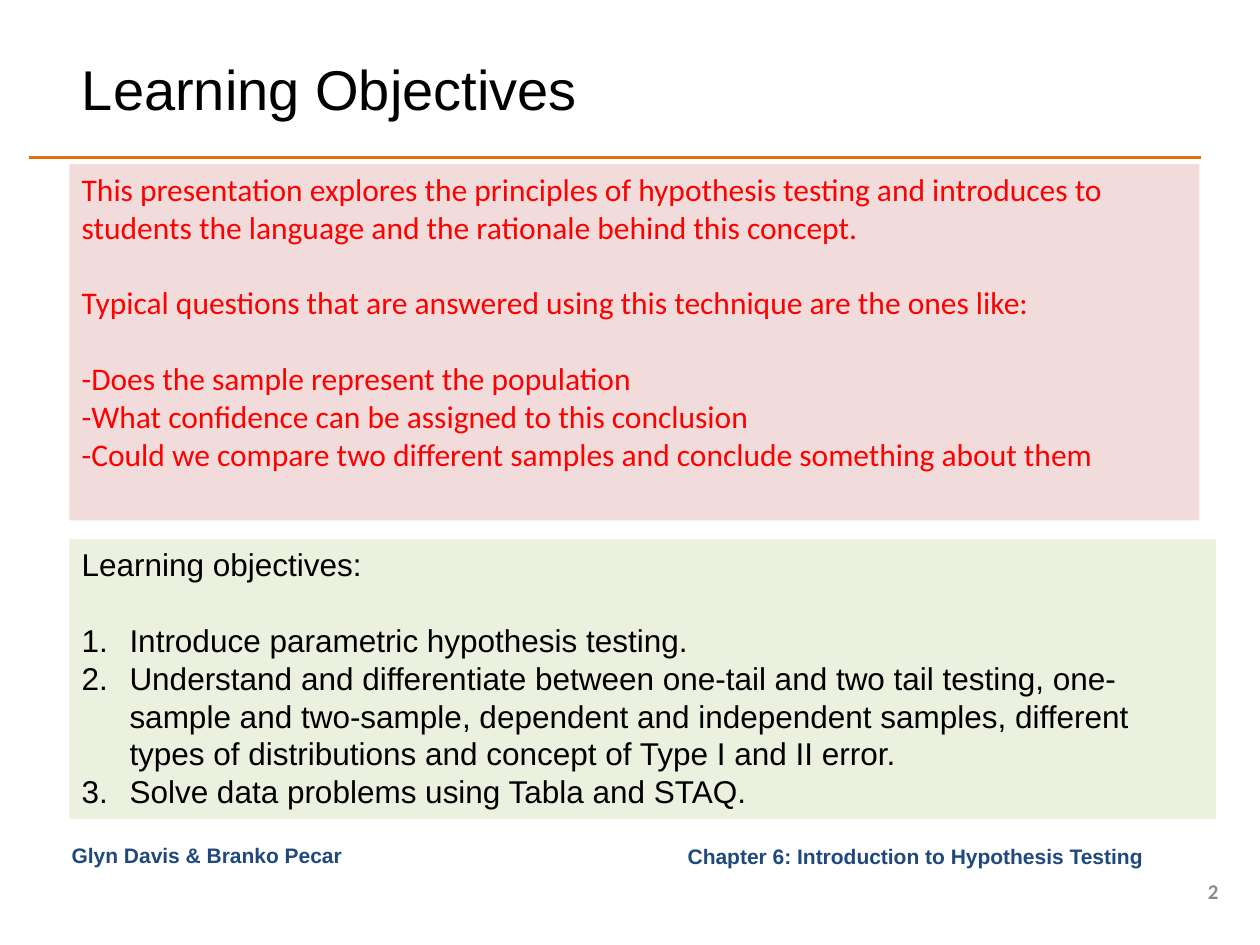
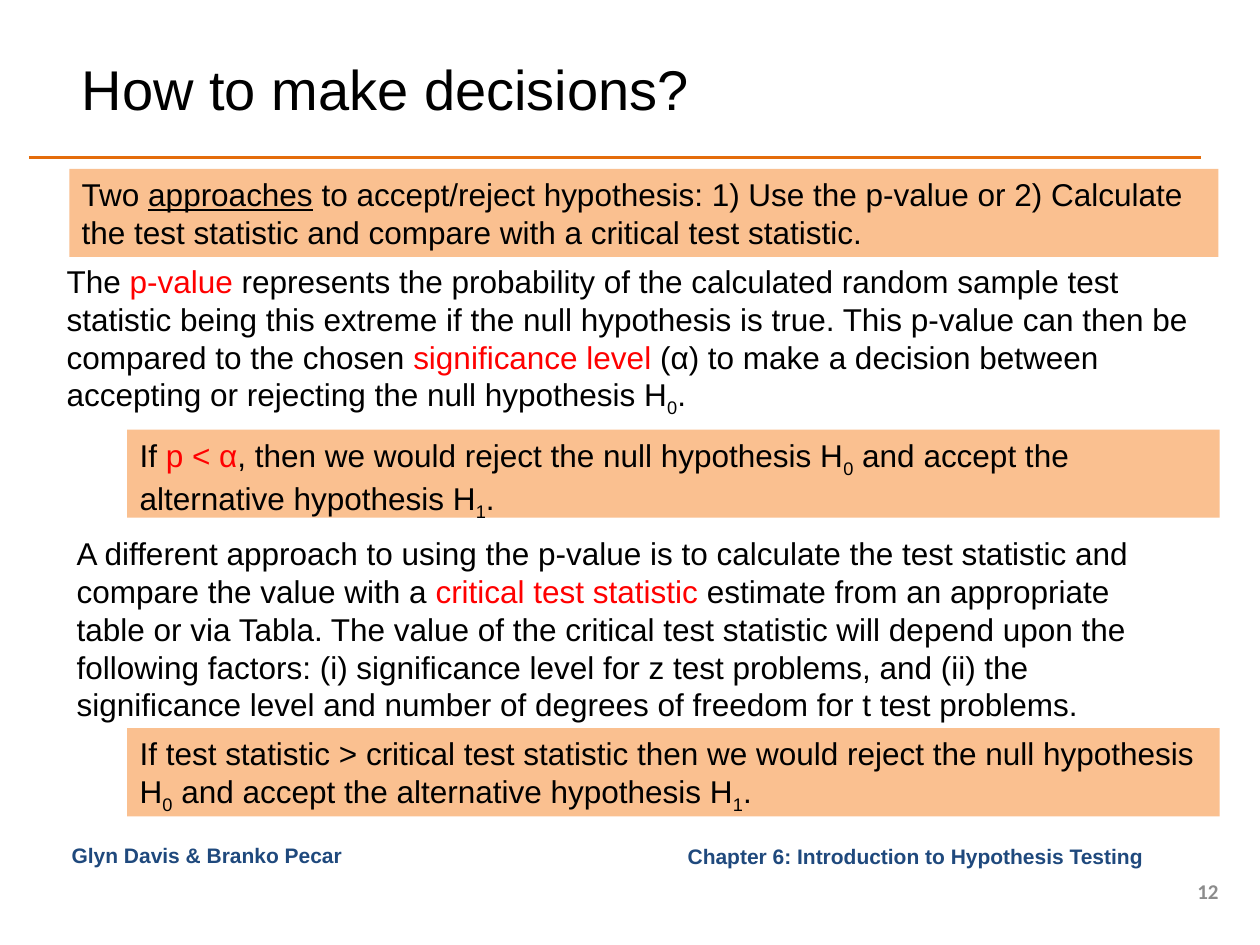
from lxml import etree
from pptx import Presentation
from pptx import util as u
from pptx.dml import color as colors
from pptx.enum import shapes, text
from pptx.oxml import ns

PX = 9144  # EMU in one px, 100 px to the inch
BLACK, RED, NAVY, GREY = "000000", "FF0000", "1F497D", "8C8C8C"
ORANGE, PINK, GREEN, PEACH = "E46C0A", "F2DCDB", "EBF1DE", "FAC090"
LEFT, RIGHT = text.PP_ALIGN.LEFT, text.PP_ALIGN.RIGHT
TOP, MIDDLE = text.MSO_ANCHOR.TOP, text.MSO_ANCHOR.MIDDLE
LINE_GAP = 21.6  # one line of 18 pt text, in points
HANG = 38        # indent of numbered items, in px


def rgb(value):
    return colors.RGBColor.from_string(value)


def write(box, place, paras, size=18, font="Arial", color=BLACK, bold=False,
          align=LEFT, anchor=TOP, fill=None, gaps=(), numbered=()):
    """Place a box and fill it; a paragraph is a string or a list of (text, style)."""
    box.left, box.top, box.width, box.height = [n * PX for n in place]
    if fill:
        box.shadow.inherit = False
        box.fill.solid()
        box.fill.fore_color.rgb = rgb(fill)
        box.line.fill.background()
    frame = box.text_frame
    frame.word_wrap = True
    frame.auto_size = text.MSO_AUTO_SIZE.NONE
    frame.vertical_anchor = anchor
    for index, spans in enumerate(paras):
        para = frame.add_paragraph() if index else frame.paragraphs[0]
        para.alignment = align
        if index in gaps:
            para.space_before = u.Pt(LINE_GAP)
        if index in numbered:
            props = para._p.get_or_add_pPr()
            props.set("marL", str(HANG * PX))
            props.set("indent", str(-HANG * PX))
            etree.SubElement(props, ns.qn("a:buFont"), typeface="+mj-lt")
            etree.SubElement(props, ns.qn("a:buAutoNum"), type="arabicPeriod")
        for words, style in [(spans, "")] if isinstance(spans, str) else spans:
            span = para.add_run()
            span.text = words
            span.font.size = u.Pt(size)
            span.font.name = font
            span.font.bold = bold
            span.font.color.rgb = rgb(RED if style == "red" else color)
            if style == "under":
                span.font.underline = True
            if style == "sub":
                span._r.get_or_add_rPr().set("baseline", "-25000")


# Content: title, page number, then (place, paragraphs, format) per box
objectives = [
    ((55, 130, 897, 283), [
        "This presentation explores the principles of hypothesis testing and introduces to "
        "students the language and the rationale behind this concept.",
        "Typical questions that are answered using this technique are the ones like:",
        "-Does the sample represent the population",
        "-What confidence can be assigned to this conclusion",
        "-Could we compare two different samples and conclude something about them",
    ], dict(fill=PINK, font="Calibri", color=RED, gaps=(1, 2))),
    ((55, 428, 910, 222), [
        "Learning objectives:",
        "Introduce parametric hypothesis testing.",
        "Understand and differentiate between one-tail and two tail testing, one-sample and "
        "two-sample, dependent and independent samples, different types of distributions "
        "and concept of Type I and II error.",
        "Solve data problems using Tabla and STAQ.",
    ], dict(fill=GREEN, gaps=(1,), numbered=(1, 2, 3))),
]

verdict = [("0", "sub"), (" and accept the alternative hypothesis H", ""),
           ("1", "sub"), (".", "")]
decisions = [
    ((43, 203, 922, 130), [[
        ("The ", ""), ("p-value", "red"),
        (" represents the probability of the calculated random sample test statistic being "
         "this extreme if the null hypothesis is true. This p-value can then be compared to "
         "the chosen ", ""),
        ("significance level", "red"),
        (" (α) to make a decision between accepting or rejecting the null hypothesis H", ""),
        ("0", "sub"), (".", ""),
    ]], {}),
    ((101, 341, 867, 70), [[
        ("If ", ""), ("p < α", "red"),
        (", then we would reject the null hypothesis H", ""), *verdict,
    ]], dict(fill=PEACH)),
    ((51, 419, 883, 160), [[
        ("A different approach to using the p-value is to calculate the test statistic and "
         "compare the value with a ", ""),
        ("critical test statistic", "red"),
        (" estimate from an appropriate table or via Tabla. The value of the critical test "
         "statistic will depend upon the following factors: (i) significance level for z test "
         "problems, and (ii) the significance level and number of degrees of freedom for t "
         "test problems.", ""),
    ]], {}),
    ((101, 578, 867, 70), [[
        ("If test statistic > critical test statistic then we would reject the null "
         "hypothesis H", ""), *verdict,
    ]], dict(fill=PEACH)),
    ((55, 134, 912, 70), [[
        ("Two ", ""), ("approaches", "under"),
        (" to accept/reject hypothesis: 1) Use the p-value or 2) Calculate the test statistic "
         "and compare with a critical test statistic.", ""),
    ]], dict(fill=PEACH)),
]

deck = Presentation()
deck.slide_width, deck.slide_height = 1000 * PX, 750 * PX
title_only = deck.slide_layouts[5]

for title, number, boxes in [("Learning Objectives", "2", objectives),
                             ("How to make decisions?", "12", decisions)]:
    page = deck.slides.add_slide(title_only)

    # Title and the rule below it
    write(page.shapes.title, (55, 31, 758, 78), [title], size=32, anchor=MIDDLE)
    rule = page.shapes.add_connector(shapes.MSO_CONNECTOR.STRAIGHT,
                                     23 * PX, 125 * PX, 953 * PX, 125 * PX)
    rule.line.color.rgb = rgb(ORANGE)
    rule.line.width = u.Pt(2)
    etree.SubElement(rule._element.spPr, ns.qn("a:effectLst"))

    # Footers: chapter, authors, page number
    footer = dict(size=12, bold=True)
    for place, words, look in [
        ((375, 664, 547, 31), "Chapter 6: Introduction to Hypothesis Testing ",
         dict(color=NAVY, align=RIGHT, anchor=MIDDLE)),
        ((47, 664, 297, 31), "Glyn Davis & Branko Pecar", dict(color=NAVY)),
        ((930, 695, 47, 24), number,
         dict(color=GREY, font="Calibri", align=RIGHT, anchor=MIDDLE)),
    ]:
        write(page.shapes.add_textbox(0, 0, 0, 0), place, [words], **footer, **look)

    # Body boxes: a filled one is a rectangle
    for place, paras, look in boxes:
        if "fill" in look:
            box = page.shapes.add_shape(shapes.MSO_SHAPE.RECTANGLE, 0, 0, 0, 0)
        else:
            box = page.shapes.add_textbox(0, 0, 0, 0)
        write(box, place, paras, **look)

deck.save("out.pptx")
